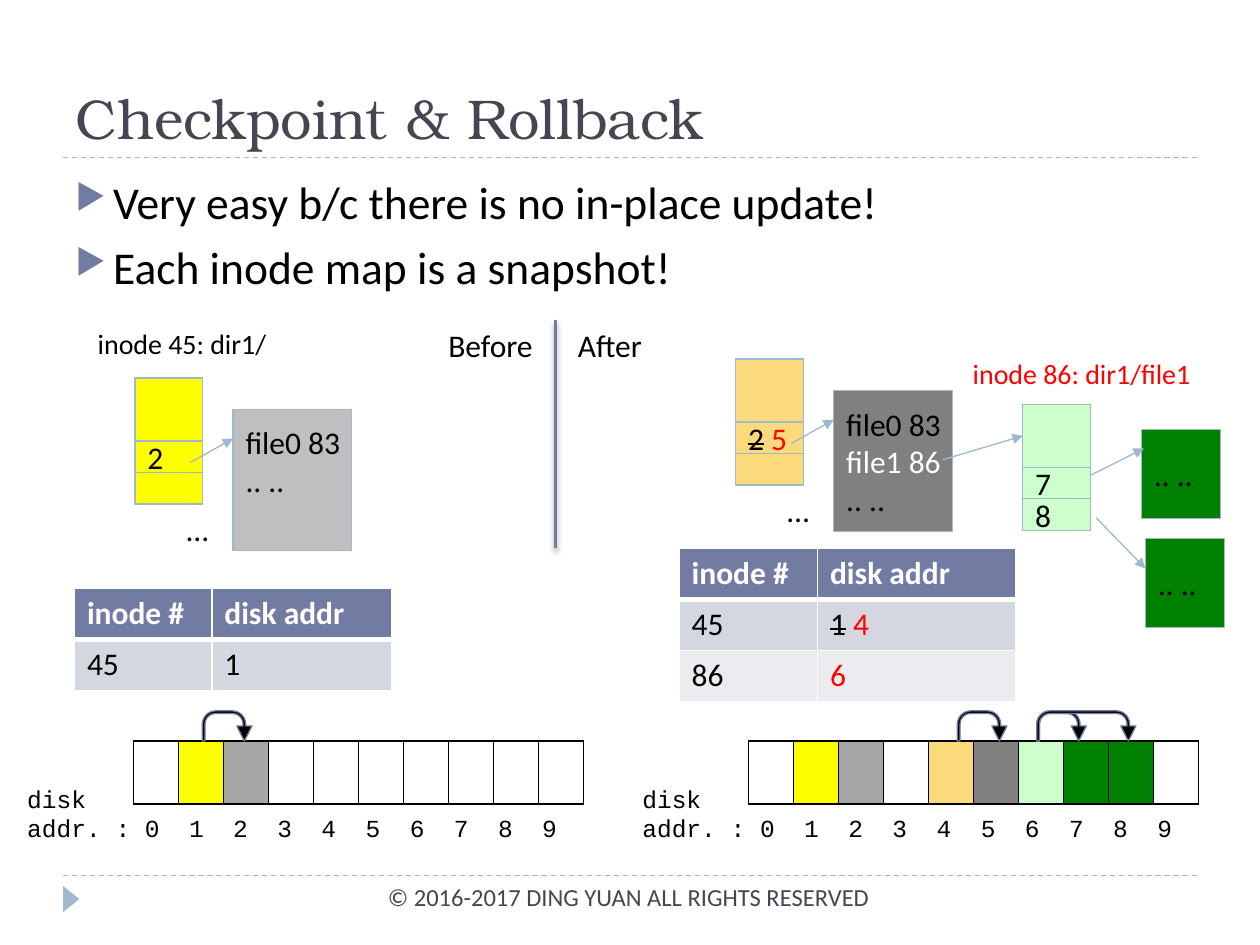
from lxml.etree import SubElement
from pptx import Presentation
from pptx.dml.color import RGBColor
from pptx.enum.dml import MSO_LINE
from pptx.enum.shapes import MSO_CONNECTOR, MSO_SHAPE
from pptx.enum.text import MSO_ANCHOR, MSO_AUTO_SIZE, PP_ALIGN
from pptx.oxml import parse_xml
from pptx.oxml.ns import nsdecls, qn
from pptx.util import Cm, Pt

BLACK, WHITE = RGBColor(0, 0, 0), RGBColor(255, 255, 255)
RED, YELLOW = RGBColor(255, 0, 0), RGBColor(255, 255, 0)
SLATE, INDIGO, SKY = RGBColor(0x46, 0x46, 0x53), RGBColor(0x72, 0x7C, 0xA3), RGBColor(0x9F, 0xB8, 0xCD)
SILVER, GREY, DARK_GREY = RGBColor(0xBF, 0xBF, 0xBF), RGBColor(0xA6, 0xA6, 0xA6), RGBColor(0x80, 0x80, 0x80)
AMBER, MINT, GREEN = RGBColor(0xFA, 0xDA, 0x7A), RGBColor(0xCC, 0xFF, 0xCC), RGBColor(0, 0x80, 0)
BAND_DARK, BAND_LIGHT = RGBColor(0xD5, 0xD7, 0xE0), RGBColor(0xEB, 0xEC, 0xF0)

OLD, NEW = "old", "new"  # a replaced value is struck out, its successor is red


def write(frame, lines, size=18, color=BLACK, font="Calibri", align=PP_ALIGN.LEFT, bold=False):
    """Fill a text frame; a line is a string or a list of (text, OLD/NEW/None) runs."""
    for index, line in enumerate(lines):
        paragraph = frame.paragraphs[0] if index == 0 else frame.add_paragraph()
        paragraph.alignment = align
        paragraph.font.name, paragraph.font.size = font, Pt(size)
        paragraph.font.bold = bold
        paragraph.font.color.rgb = color
        for text, state in [(line, None)] if isinstance(line, str) else line:
            run = paragraph.add_run()
            run.text = text
            if state == NEW:
                run.font.color.rgb = RED
            elif state == OLD:
                run.font._element.set("strike", "sngStrike")


def label(slide, left, top, width, height, lines, wrap=True, **style):
    box = slide.shapes.add_textbox(left, top, width, height)
    box.text_frame.word_wrap = wrap
    write(box.text_frame, lines, **style)
    return box


def shape(slide, preset, left, top, width, height, fill, line=SKY):
    part = slide.shapes.add_shape(preset, left, top, width, height)
    part.shadow.inherit = False
    part.fill.solid()
    part.fill.fore_color.rgb = fill
    if line is None:
        part.line.fill.background()
    else:
        part.line.color.rgb, part.line.width = line, Pt(0.75)
    return part


def block(slide, left, top, width, height, fill, lines=()):
    part = shape(slide, MSO_SHAPE.RECTANGLE, left, top, width, height, fill)
    part.text_frame.word_wrap = False
    part.text_frame.vertical_anchor = MSO_ANCHOR.MIDDLE
    write(part.text_frame, lines)
    return part


def straight(slide, x1, y1, x2, y2, color=SKY, width=0.75, dashed=False, arrow=False):
    link = slide.shapes.add_connector(MSO_CONNECTOR.STRAIGHT, x1, y1, x2, y2)
    link.line.color.rgb, link.line.width = color, Pt(width)
    if dashed:
        link.line.dash_style = MSO_LINE.DASH
    if arrow:
        SubElement(link.line._ln, qn("a:tailEnd"), type="triangle")
    SubElement(link._element.spPr, qn("a:effectLst"))
    return link


def border(cell, color, **widths):
    """Draw the sides of a cell, with widths in points for L, R, T and B."""
    for side in "LRTB":
        cell._tc.get_or_add_tcPr().append(parse_xml(
            f'<a:ln{side} {nsdecls("a")} w="{Pt(widths.get(side, 1))}"><a:solidFill>'
            f'<a:srgbClr val="{color}"/></a:solidFill></a:ln{side}>'))


def plain_table(slide, left, top, widths, row_height, rows):
    frame = slide.shapes.add_table(rows, len(widths), left, top, sum(widths), row_height * rows)
    table = frame.table
    table.first_row = table.horz_banding = False
    for column, width in zip(table.columns, widths):
        column.width = width
    return table


def inode(slide, left, top, fill, slots):
    """Draw a header block over pointer slots, and return the header."""
    width, slot_height = Cm(1.37), Cm(0.635)
    for row, lines in enumerate(slots, start=2):
        block(slide, left, top + row * slot_height, width, slot_height, fill, lines)
    return block(slide, left, top, width, 2 * slot_height, fill)


def directory(slide, left, top, inode_fill, pointer, data_fill, entries):
    """Draw a directory inode that points to its data block, and return that block."""
    inode(slide, left, top, inode_fill, [[pointer], []])
    label(slide, left + Cm(0.41), top + Cm(2.54), Cm(1.7), Cm(0.94), ["…"], align=PP_ALIGN.CENTER)
    data = block(slide, left + Cm(1.98), top + Cm(0.64), Cm(2.39), Cm(2.84), data_fill, entries)
    straight(slide, left + Cm(1.12), top + Cm(1.7), left + Cm(1.98), top + Cm(1.22), arrow=True)
    return data


def inode_map(slide, left, top, widths, entries):
    rows = [("inode #", "disk addr"), *entries]
    table = plain_table(slide, left, top, widths, Cm(1.03), len(rows))
    for r, row in enumerate(rows):
        fill = INDIGO if r == 0 else (BAND_LIGHT, BAND_DARK)[r % 2]
        for c, content in enumerate(row):
            cell = table.cell(r, c)
            border(cell, WHITE, T=3 if r == 1 else 1, B=3 if r == 0 else 1)
            cell.fill.solid()
            cell.fill.fore_color.rgb = fill
            write(cell.text_frame, [content], color=BLACK if r else WHITE, bold=r == 0)


def disk(slide, left, top, used, arcs):
    """Draw ten disk blocks, coloured by address, with (offset, width) arcs above."""
    label(slide, left, top + Cm(1.35), Cm(12.8), Cm(1.45),
          ["disk", "addr. : " + "  ".join(map(str, range(10)))], size=14, font="Courier New")
    table = plain_table(slide, left + Cm(2.39), top + Cm(0.61), [Cm(0.907)] * 10, Cm(1.27), 1)
    for address in range(10):
        cell = table.cell(0, address)
        border(cell, BLACK)
        if address in used:
            cell.fill.solid()
            cell.fill.fore_color.rgb = used[address]
        else:
            cell.fill.background()
    for offset, width in arcs:
        arc = shape(slide, MSO_SHAPE.U_TURN_ARROW, left + offset, top, width, Cm(0.61), BLACK, INDIGO)
        for index, value in enumerate((0.09, 0.25, 0.5, 0.44, 1)):
            arc.adjustments[index] = value


def before_panel(slide, left, top):
    label(slide, left + Cm(0.97), top, Cm(4.8), Cm(0.94), ["inode 45: dir1/"],
          size=16, align=PP_ALIGN.CENTER)
    data = directory(slide, left + Cm(2.42), top + Cm(1.17), YELLOW, "2", SILVER, ["file0 83", ".. .."])
    data.text_frame.margin_bottom = Cm(0.9)
    inode_map(slide, left + Cm(1.2), top + Cm(5.41), [Cm(2.77), Cm(3.63)], [("45", "1")])
    disk(slide, left, top + Cm(7.88), {1: YELLOW, 2: GREY}, [(Cm(3.78), Cm(1))])


def after_panel(slide, left, top):
    data = directory(slide, left + Cm(2.13), top + Cm(0.79), AMBER,
                     [("2", OLD), (" ", None), ("5", NEW)], DARK_GREY, ["file0 83", "file1 86", ".. .."])
    data.text_frame.paragraphs[1].font.color.rgb = WHITE
    label(slide, left + Cm(6.3), top + Cm(0.61), Cm(5.61), Cm(0.94), ["inode 86: dir1/file1"],
          size=16, color=RED, align=PP_ALIGN.CENTER)
    for x, y in ((10.31, 2.21), (10.39, 4.4)):
        block(slide, left + Cm(x), top + Cm(y), Cm(1.6), Cm(1.8), GREEN, [".. .."])
    for x1, y1, x2, y2 in ((9.09, 3.23, 10.36, 2.59), (9.4, 3.99, 10.39, 5.01)):
        straight(slide, left + Cm(x1), top + Cm(y1), left + Cm(x2), top + Cm(y2), arrow=True)
    file_inode = inode(slide, left + Cm(7.92), top + Cm(1.7), MINT, [["7"], ["8"]])
    entry_link = straight(slide, left + Cm(6.3), top + Cm(2.82), left + Cm(7.92), top + Cm(2.34), arrow=True)
    entry_link.end_connect(file_inode, 1)
    inode_map(slide, left + Cm(0.99), top + Cm(4.6), [Cm(2.79), Cm(3.99)],
              [("45", [("1", OLD), (" 4", NEW)]), ("86", [("6", NEW)])])
    disk(slide, left, top + Cm(7.88),
         {1: YELLOW, 2: GREY, 4: AMBER, 5: DARK_GREY, 6: MINT, 7: GREEN, 8: GREEN},
         [(Cm(6.6), Cm(1)), (Cm(8.2), Cm(1)), (Cm(8.2), Cm(2))])


def divider(slide, left, top):
    line = straight(slide, left, top, left, top + Cm(4.6), INDIGO, 1.5)
    shadow = SubElement(line._element.spPr.find(qn("a:effectLst")), qn("a:outerShdw"),
                        blurRad=str(Pt(3)), dist=str(Pt(2)), dir="5400000", rotWithShape="0")
    SubElement(SubElement(shadow, qn("a:srgbClr"), val="000000"), qn("a:alpha"), val="40000")
    label(slide, left - Cm(2.41), top, Cm(2.24), Cm(1.02), ["Before"], wrap=False)
    label(slide, left + Cm(0.2), top, Cm(1.88), Cm(1.02), ["After"], wrap=False)


def heading(slide, left, top, width):
    title = slide.shapes.title
    title.left, title.top, title.width, title.height = left, top, width, Cm(2.74)
    title.text_frame.auto_size = MSO_AUTO_SIZE.NONE
    title.text_frame.vertical_anchor = MSO_ANCHOR.BOTTOM
    write(title.text_frame, ["Checkpoint & Rollback"], size=32, color=SLATE, font="TeX Gyre Bonum")
    rule = top + Cm(2.74)
    straight(slide, left, rule, left + width, rule, dashed=True)


def key_points(slide, left, top, width):
    box = label(slide, left, top, width, Cm(3), ["Very easy b/c there is no in-place update!",
                                                 "Each inode map is a snapshot!"], size=26)
    for paragraph in box.text_frame.paragraphs:
        paragraph.space_before = Pt(6)
        props = paragraph._p.get_or_add_pPr()
        props.set("marL", str(Cm(0.76)))
        props.set("indent", str(-Cm(0.76)))
        color = parse_xml(f'<a:buClr {nsdecls("a")}><a:srgbClr val="{INDIGO}"/></a:buClr>')
        size = parse_xml(f'<a:buSzPct {nsdecls("a")} val="76000"/>')
        bullet = parse_xml(f'<a:buChar {nsdecls("a")} char="▶"/>')
        for element in (color, size, bullet):
            props.find(qn("a:defRPr")).addprevious(element)


def footer(slide, left, top, width):
    straight(slide, left, top, left + width, top, dashed=True)
    marker = shape(slide, MSO_SHAPE.ISOSCELES_TRIANGLE, left - Cm(0.1), top + Cm(0.31),
                   Cm(0.53), Cm(0.33), SKY, None)
    marker.rotation = 90
    label(slide, left + Cm(5.23), top, Cm(11.28), Cm(1.02),
          ["© 2016-2017 DING YUAN ALL RIGHTS RESERVED"], size=14, color=SLATE, align=PP_ALIGN.RIGHT)


def main():
    deck = Presentation()
    deck.slide_width, deck.slide_height = Cm(25.4), Cm(19.05)
    slide = deck.slides.add_slide(deck.slide_layouts[5])
    margin, content_width, panel_top = Cm(1.27), Cm(22.86), Cm(6.45)
    heading(slide, margin, Cm(0.43), content_width)
    key_points(slide, margin, Cm(3.38), content_width)
    before_panel(slide, Cm(0.3), panel_top)
    divider(slide, Cm(11.2), panel_top)
    after_panel(slide, Cm(12.7), panel_top)
    footer(slide, margin, Cm(17.65), content_width)
    deck.save("out.pptx")


if __name__ == "__main__":
    main()
